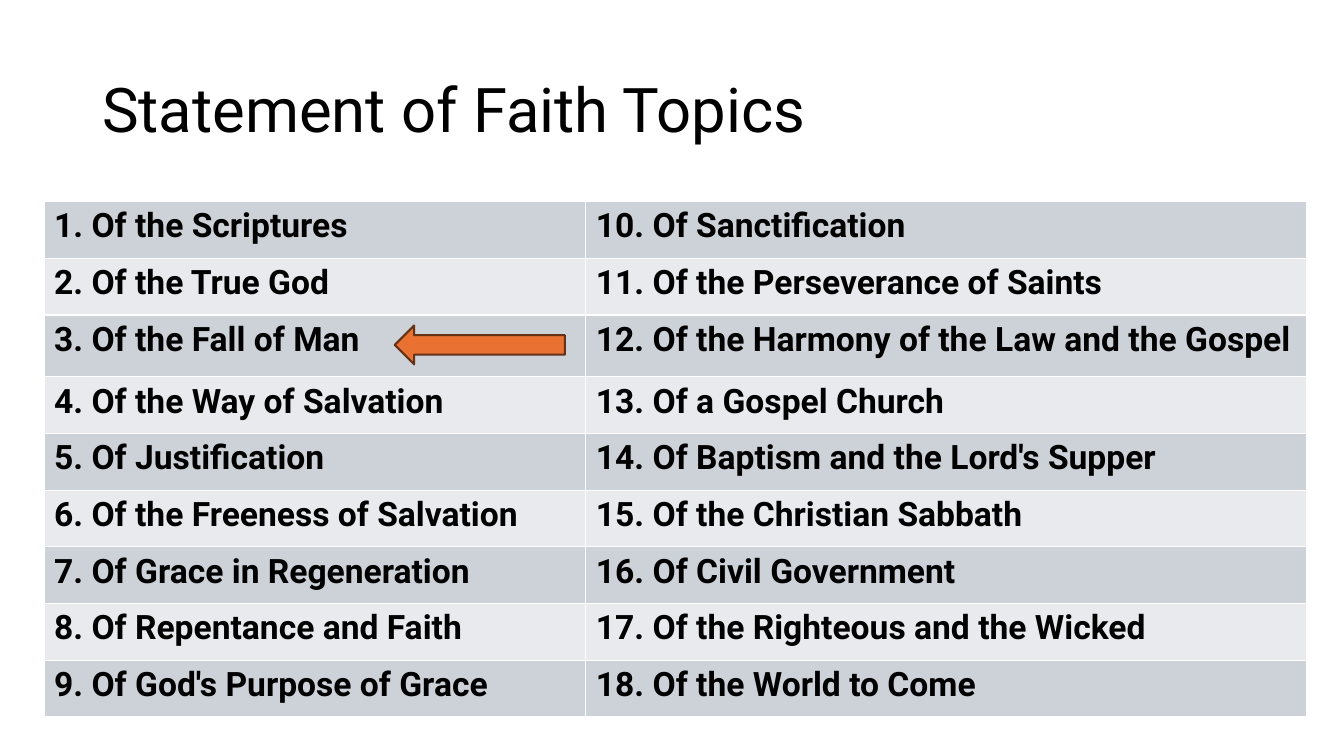
"""Build the Statement of Faith Topics slide."""
from lxml import etree
from pptx import Presentation
from pptx.dml.color import RGBColor
from pptx.enum.shapes import MSO_SHAPE
from pptx.enum.text import MSO_ANCHOR
from pptx.oxml.ns import qn
from pptx.util import Pt

PX = 9525
LEFT_ARROW = MSO_SHAPE.LEFT_ARROW
MIDDLE = MSO_ANCHOR.MIDDLE
COLORS = {
    "text": "000000", "band_dark": "CCD2D8", "band_light": "E8EAED",
    "border": "FFFFFF", "arrow": "E97132", "arrow_line": "663216",
}
TITLE_FONT = {"name": "Roboto", "size": Pt(44), "bold": False}
CELL_FONT = {"name": "Roboto", "size": Pt(24), "bold": True}
TOPICS = [
    "Of the Scriptures", "Of the True God", "Of the Fall of Man",
    "Of the Way of Salvation", "Of Justification",
    "Of the Freeness of Salvation", "Of Grace in Regeneration",
    "Of Repentance and Faith", "Of God's Purpose of Grace",
    "Of Sanctification", "Of the Perseverance of Saints",
    "Of the Harmony of the Law and the Gospel", "Of a Gospel Church",
    "Of Baptism and the Lord's Supper", "Of the Christian Sabbath",
    "Of Civil Government", "Of the Righteous and the Wicked",
    "Of the World to Come",
]
COL_WIDTHS = [516, 686]
ROW_HEIGHTS = [54, 54, 59, 54, 54, 54, 54, 54, 54]


def rgb(name):
    return RGBColor.from_string(COLORS[name])


def write(p, text, font):
    r = p.add_run()
    r.text = text
    for key, value in font.items():
        setattr(r.font, key, value)
    r.font.color.rgb = rgb("text")


prs = Presentation()
prs.slide_width, prs.slide_height = 1280 * PX, 720 * PX
s = prs.slides.add_slide(prs.slide_layouts[6])

title = s.shapes.add_textbox(88 * PX, 38 * PX, 1104 * PX, 139 * PX)
tf = title.text_frame
tf.word_wrap = True
tf.vertical_anchor = MIDDLE
tf.paragraphs[0].line_spacing = 0.9
write(tf.paragraphs[0], "Statement of Faith Topics", TITLE_FONT)

rows, cols = len(ROW_HEIGHTS), len(COL_WIDTHS)
table = s.shapes.add_table(rows, cols, 42 * PX, 192 * PX,
                           sum(COL_WIDTHS) * PX, sum(ROW_HEIGHTS) * PX).table
table.first_row = False
for col, width in zip(table.columns, COL_WIDTHS):
    col.width = width * PX
for row, height in zip(table.rows, ROW_HEIGHTS):
    row.height = height * PX

for i, topic in enumerate(TOPICS):
    col, row = divmod(i, rows)
    cell = table.cell(row, col)
    write(cell.text_frame.paragraphs[0], f"{i + 1}. {topic}", CELL_FONT)
    tcPr = cell._tc.get_or_add_tcPr()
    for side in ("lnL", "lnR", "lnT", "lnB"):
        ln = etree.SubElement(tcPr, qn(f"a:{side}"), w=str(Pt(1)))
        fill = etree.SubElement(ln, qn("a:solidFill"))
        etree.SubElement(fill, qn("a:srgbClr"), val=COLORS["border"])
    cell.fill.solid()
    cell.fill.fore_color.rgb = rgb("band_light" if row % 2 else "band_dark")

arrow = s.shapes.add_shape(LEFT_ARROW, 376 * PX, 310 * PX, 162 * PX, 37 * PX)
arrow.shadow.inherit = False
arrow.fill.solid()
arrow.fill.fore_color.rgb = rgb("arrow")
arrow.line.color.rgb = rgb("arrow_line")
arrow.line.width = Pt(1.5)

prs.save("out.pptx")
